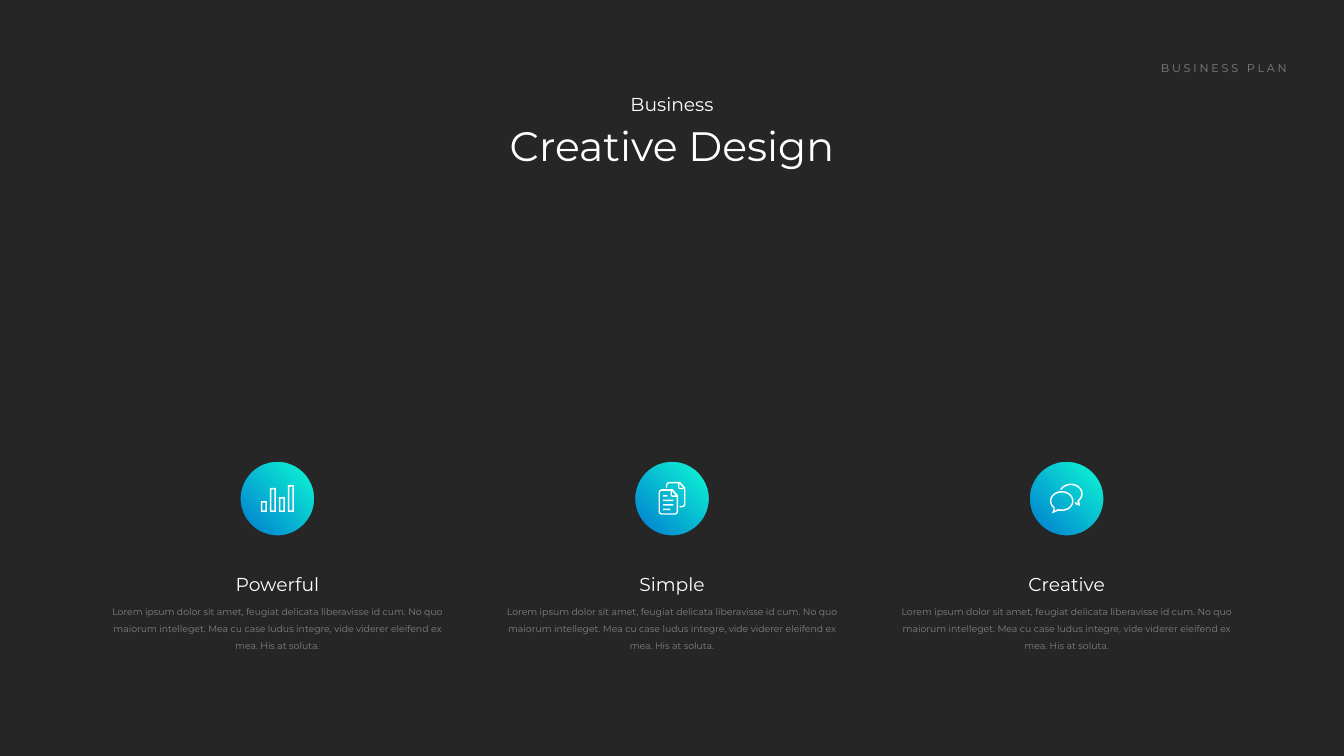
from math import cos, radians, sin

from pptx import Presentation
from pptx.dml.color import RGBColor
from pptx.enum.shapes import MSO_SHAPE
from pptx.enum.text import MSO_AUTO_SIZE, PP_ALIGN
from pptx.util import Pt

THEME = {
    "font": "Montserrat",
    "background": RGBColor.from_string("262626"),
    "white": RGBColor.from_string("FFFFFF"),
    "grey": RGBColor.from_string("808080"),
    "gradient": [RGBColor.from_string("0EFDD4"), RGBColor.from_string("0078CF")],
    "title": Pt(44),
    "heading": Pt(20),
    "label": Pt(12),
    "body": Pt(10),
}
BODY = (
    "Lorem ipsum dolor sit amet, feugiat delicata liberavisse id cum. "
    "No quo maiorum intelleget. Mea cu case ludus integre, vide viderer "
    "eleifend ex mea. His at soluta."
)


def rectangle(left, top, right, bottom):
    return [(left, top), (right, top), (right, bottom), (left, bottom)]


def arc(center_x, center_y, radius_x, radius_y, start, end, steps=32):
    angles = [radians(start + (end - start) * i / steps) for i in range(steps + 1)]
    return [(center_x + radius_x * cos(a), center_y + radius_y * sin(a)) for a in angles]


deck = Presentation()
deck.slide_width, deck.slide_height = Pt(1440), Pt(810)
slide = deck.slides.add_slide(deck.slide_layouts[6])
slide.background.fill.solid()
slide.background.fill.fore_color.rgb = THEME["background"]

# Icon outlines in points from the circle centre; inner contours cut holes
bar_chart = []
for index, top in enumerate([2.9, -11.5, -1.4, -14.4]):
    left = -17.6 + 9.6 * index
    bar_chart.append(rectangle(left, top, left + 6.4, 14.4))
    bar_chart.append(rectangle(left + 1.6, top + 1.6, left + 4.8, 12.8))

documents = [
    # Front page, its inside and its folded corner
    [(-10.8, -10.1), (0.7, -10.1), (6.5, -3.6), (6.5, 14.4), (5.5, 16.4), (2.9, 17.3),
     (-10.8, 17.3), (-13.4, 16.4), (-14.4, 14.4), (-14.4, -6.5), (-13.4, -9.1)],
    [(-10.8, -8.3), (-1.4, -8.3), (-1.4, -3), (0, -1.8), (5, -1.8), (5, 14.4),
     (4.3, 15.3), (2.9, 15.8), (-10.8, 15.8), (-12.2, 15.3), (-12.9, 14.4),
     (-12.9, -6.5), (-12.2, -7.8)],
    [(0, -7.9), (0, -3.4), (4.3, -3.4)],
    # Back page and its folded corner
    [(-2.9, -18), (8.6, -18), (14.4, -11.5), (14.4, 6.5), (13.4, 8.6), (10.8, 9.4),
     (8.6, 9.4), (7.9, 8.6), (8.6, 7.9), (10.8, 7.9), (12.2, 7.2), (12.9, 6.5),
     (12.9, -10), (7.9, -10), (6.5, -11.3), (6.5, -16.4), (-2.9, -16.4),
     (-4.3, -15.8), (-5, -14.4), (-5, -12.2), (-5.8, -11.5), (-6.5, -12.2),
     (-6.5, -14.4), (-5.4, -17)],
    [(8, -16), (8, -11.5), (12.2, -11.5)],
]
for index, right in enumerate([-5, 1.4, 1.4, -1.8]):
    top = -3.6 + 4.8 * index
    documents.append(rectangle(-9.4, top, right, top + 1.5))

speech_bubbles = [
    arc(-5.2, 2.6, 12.6, 10.7, 133, 465) + [(-15.6, 15.8)],
    arc(-5.2, 2.6, 11.1, 9.1, 133, 470) + [(-12.7, 13)],
    arc(4.6, -5.2, 12.7, 10.8, 204, 405)
    + [(14.6, 7.9), (8.9, 5.8), (8.9, 3.8), (12.2, 5), (11.5, 2.4)]
    + arc(4.6, -5.2, 11.1, 9.2, 405, 208),
]

# Three columns: circle with icon now, text gathered for below
columns = [
    ("Powerful", bar_chart),
    ("Simple", documents),
    ("Creative", speech_bubbles),
]
DIAMETER, CIRCLE_MIDDLE, COLUMN_WIDTH, COLUMN_PITCH = 82, 534.2, 376, 422.8
UNITS_PER_POINT = 100

# Each text box: left, top, width, height, alignment, paragraphs
# Each paragraph: text, size, colour, paragraph format, letter spacing
text_boxes = [
    (1216, 62.6, 170, 21.8, PP_ALIGN.RIGHT,
     [("BUSINESS PLAN", "label", "grey", {}, 300)]),
    (492, 95.8, 456, 90.7, PP_ALIGN.CENTER,
     [("Business", "heading", "white", {}, 0),
      ("Creative Design", "title", "white", {"space_before": Pt(6)}, 0)]),
]
for index, (heading, contours) in enumerate(columns):
    middle = 720 + (index - 1) * COLUMN_PITCH

    circle = slide.shapes.add_shape(
        MSO_SHAPE.OVAL, Pt(middle - DIAMETER / 2), Pt(CIRCLE_MIDDLE - DIAMETER / 2),
        Pt(DIAMETER), Pt(DIAMETER))
    circle.shadow.inherit = False
    circle.fill.gradient()
    circle.fill.gradient_angle = 225
    for stop, color in zip(circle.fill.gradient_stops, THEME["gradient"]):
        stop.color.rgb = color
    circle.line.color.rgb = THEME["background"]
    circle.line.width = Pt(3)

    scaled = [[(round(x * UNITS_PER_POINT), round(y * UNITS_PER_POINT)) for x, y in contour]
              for contour in contours]
    builder = slide.shapes.build_freeform(*scaled[0][0], scale=Pt(1) / UNITS_PER_POINT)
    builder.add_line_segments(scaled[0][1:], close=True)
    for contour in scaled[1:]:
        builder.move_to(*contour[0])
        builder.add_line_segments(contour[1:], close=True)
    icon = builder.convert_to_shape(Pt(middle), Pt(CIRCLE_MIDDLE))
    icon.shadow.inherit = False
    icon.fill.solid()
    icon.fill.fore_color.rgb = THEME["white"]
    icon.line.fill.background()

    text_boxes.append((
        middle - COLUMN_WIDTH / 2, 609.8, COLUMN_WIDTH, 90, PP_ALIGN.CENTER,
        [(heading, "heading", "white", {"space_before": Pt(12)}, 0),
         (BODY, "body", "grey", {"space_before": Pt(6), "line_spacing": 1.5}, 0)]))

# Text
for left, top, width, height, alignment, paragraphs in text_boxes:
    box = slide.shapes.add_textbox(Pt(left), Pt(top), Pt(width), Pt(height))
    frame = box.text_frame
    frame.word_wrap = True
    frame.auto_size = MSO_AUTO_SIZE.SHAPE_TO_FIT_TEXT
    for index, (text, size, color, formats, spacing) in enumerate(paragraphs):
        para = frame.add_paragraph() if index else frame.paragraphs[0]
        for name, value in {"alignment": alignment, **formats}.items():
            setattr(para, name, value)
        span = para.add_run()
        span.text = text
        for name, value in {"name": THEME["font"], "size": THEME[size]}.items():
            setattr(span.font, name, value)
        span.font.color.rgb = THEME[color]
        if spacing:
            span._r.get_or_add_rPr().set("spc", str(spacing))

deck.save("out.pptx")
